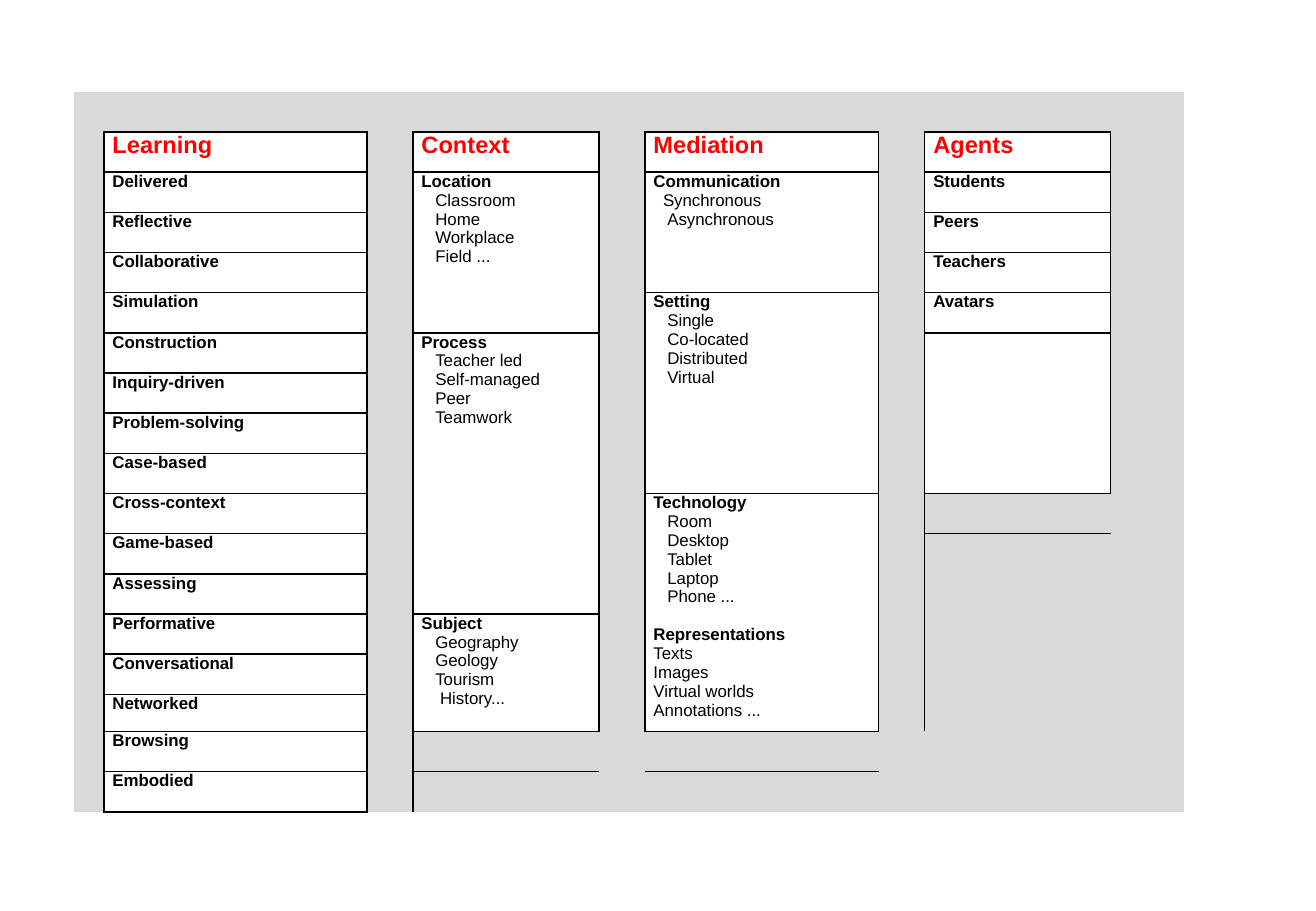
from collections import defaultdict

from lxml import etree
from pptx import Presentation
from pptx import util as u
from pptx.dml.color import RGBColor
from pptx.oxml import ns

RED = RGBColor(0xFF, 0x00, 0x00)
BLACK = RGBColor(0x00, 0x00, 0x00)
WHITE = RGBColor(0xFF, 0xFF, 0xFF)
GREY = RGBColor(0xD9, 0xD9, 0xD9)

NO_GRID_STYLE = "{2D5ABB26-0587-4C30-8999-92F81FD0307C}"
SIDES = ("lnL", "lnR", "lnT", "lnB")
INDENT = 0.29

COLUMN_WIDTHS = [0.62, 5.5, 0.96, 3.89, 0.96, 4.89, 0.96, 3.89, 1.53]
ROW_HEIGHTS = [0.84] * 15 + [0.75] + [0.84] * 2

LEARNING = [
    "Delivered", "Reflective", "Collaborative", "Simulation", "Construction",
    "Inquiry-driven", "Problem-solving", "Case-based", "Cross-context",
    "Game-based", "Assessing", "Performative", "Conversational", "Networked",
    "Browsing", "Embodied",
]
AGENTS = ["Students", "Peers", "Teachers", "Avatars"]


def heading(words, **style):
    return words, dict(bold=True, **style)


def group(title, *items, indent=INDENT):
    return [heading(title)] + [(item, dict(indent=indent)) for item in items]


def singles(names):
    return [(1, group(name)) for name in names]


CONTEXT = [
    (4, group("Location", "Classroom", "Home", "Workplace", "Field ...")),
    (7, group("Process", "Teacher led", "Self-managed", "Peer", "Teamwork")),
    (3, group("Subject", "Geography", "Geology", "Tourism")
        + [("History...", dict(indent=0.39))]),
]
MEDIATION = [
    (3, group("Communication")
        + [("Synchronous", dict(indent=0.2)), ("Asynchronous", dict(indent=INDENT))]),
    (5, group("Setting", "Single", "Co-located", "Distributed", "Virtual")),
    (6, group("Technology", "Room", "Desktop", "Tablet", "Laptop", "Phone ...")
        + [heading("Representations", before=11.2)]
        + group("", "Texts", "Images", "Virtual worlds", "Annotations ...", indent=0)[1:]),
]
COLUMNS = {
    "Learning": singles(LEARNING),
    "Context": CONTEXT,
    "Mediation": MEDIATION,
    "Agents": singles(AGENTS) + [(4, [])],
}


def write(para, words, size=10, color=BLACK, bold=False, indent=0, before=0):
    if indent:
        para._p.get_or_add_pPr().set("marL", str(u.Cm(indent)))
    para.space_before = u.Pt(before)
    span = para.add_run()
    span.text = words
    span.font.name = "Arial"
    span.font.size = u.Pt(size)
    span.font.bold = bold
    span.font.color.rgb = color


class Slide:
    def __init__(self, deck):
        self.page = deck.slides.add_slide(deck.slide_layouts[6])
        self.edges = defaultdict(set)

    def grid(self, left, top, widths, heights):
        frame = self.page.shapes.add_table(
            len(heights), len(widths), u.Cm(left), u.Cm(top),
            u.Cm(sum(widths)), u.Cm(sum(heights)))
        self.table = frame.table
        self.table.first_row = False
        self.table.horz_banding = False
        self.table._tbl.tblPr.find(ns.qn("a:tableStyleId")).text = NO_GRID_STYLE
        for column, width in zip(self.table.columns, widths):
            column.width = u.Cm(width)
        for row, height in zip(self.table.rows, heights):
            row.height = u.Cm(height)
        for cell in self.table.iter_cells():
            cell.margin_left = cell.margin_right = u.Cm(0.18)
            cell.margin_top = cell.margin_bottom = 0
            cell.fill.solid()
            cell.fill.fore_color.rgb = GREY

    def block(self, row, column, span, lines):
        last = row + span - 1
        box = self.table.cell(row, column)
        if span > 1:
            box.merge(self.table.cell(last, column))
        for number in range(row, last + 1):
            fill = self.table.cell(number, column).fill
            fill.solid()
            fill.fore_color.rgb = WHITE
            self.edges[number, column] |= {"lnL", "lnR"}
            self.edges[number, column - 1].add("lnR")
            self.edges[number, column + 1].add("lnL")
        self.edges[row, column].add("lnT")
        self.edges[row - 1, column].add("lnB")
        self.edges[last, column].add("lnB")
        self.edges[last + 1, column].add("lnT")
        for index, (words, style) in enumerate(lines):
            frame = box.text_frame
            para = frame.add_paragraph() if index else frame.paragraphs[0]
            write(para, words, **style)

    def borders(self):
        for row in range(len(self.table.rows)):
            for column in range(len(self.table.columns)):
                props = self.table.cell(row, column)._tc.get_or_add_tcPr()
                sides = [side for side in SIDES if side in self.edges[row, column]]
                for index, side in enumerate(sides):
                    line = etree.Element(ns.qn("a:" + side), w=str(u.Pt(1)))
                    fill = etree.SubElement(line, ns.qn("a:solidFill"))
                    etree.SubElement(fill, ns.qn("a:srgbClr"), val=str(BLACK))
                    props.insert(index, line)


def main():
    deck = Presentation()
    deck.slide_width, deck.slide_height = u.Cm(27.51), u.Cm(19.05)
    slide = Slide(deck)
    slide.grid(1.55, 1.92, COLUMN_WIDTHS, ROW_HEIGHTS)
    for index, (title, blocks) in enumerate(COLUMNS.items()):
        column = 2 * index + 1
        slide.block(1, column, 1, [heading(title, size=14, color=RED)])
        row = 2
        for span, lines in blocks:
            slide.block(row, column, span, lines)
            row += span
    slide.borders()
    deck.save("out.pptx")


if __name__ == "__main__":
    main()
